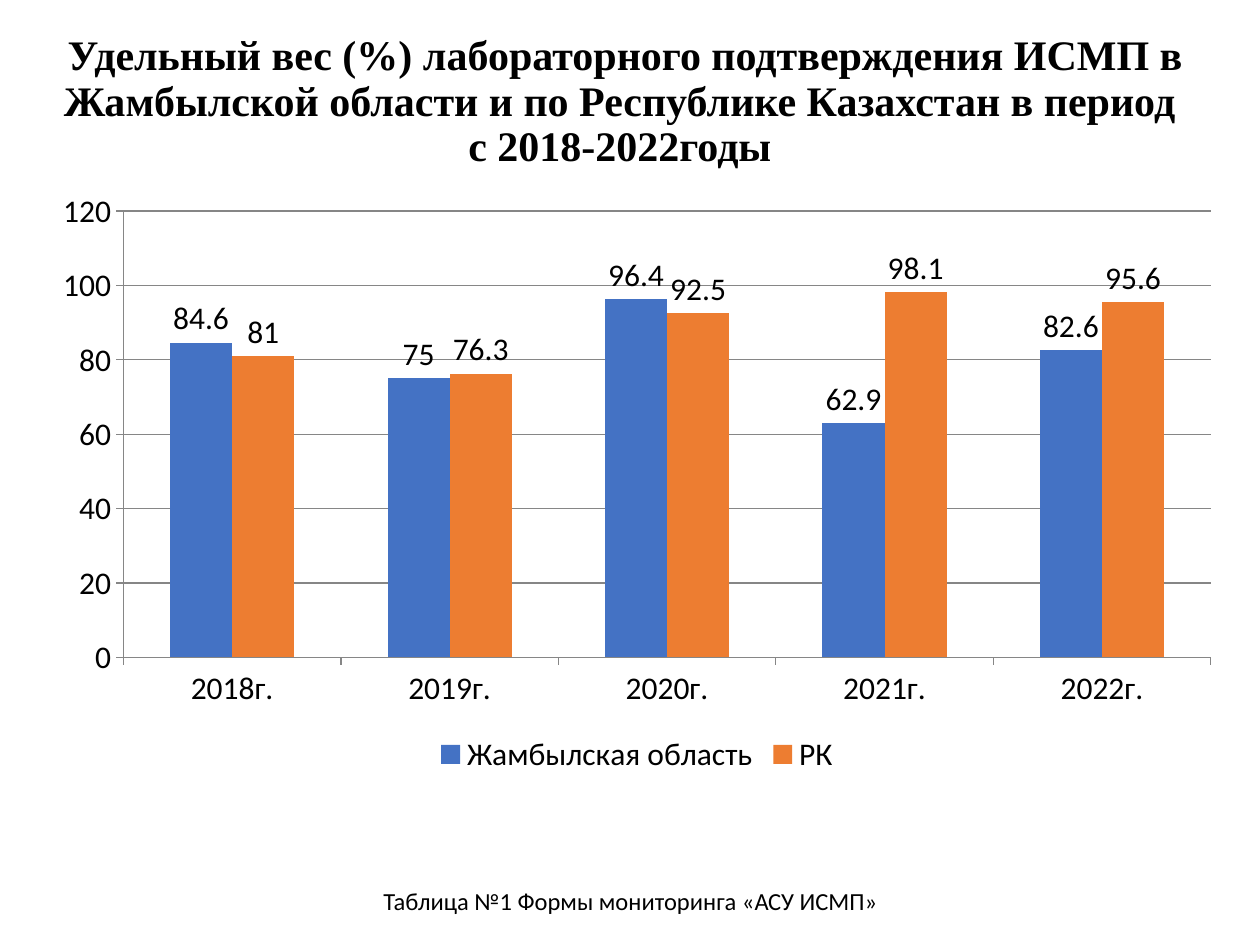
from pptx import Presentation
from pptx.chart.data import CategoryChartData
from pptx.dml.color import RGBColor
from pptx.enum.chart import XL_CHART_TYPE, XL_LABEL_POSITION, XL_LEGEND_POSITION, XL_TICK_MARK
from pptx.enum.text import MSO_ANCHOR, PP_ALIGN
from pptx.util import Cm, Pt

COLORS = {"text": "000000", "region": "4472C4", "country": "ED7D31", "grid": "868686"}

YEARS = ["2018г.", "2019г.", "2020г.", "2021г.", "2022г."]
SERIES = [
    ("Жамбылская область", [84.6, 75, 96.4, 62.9, 82.6], "region"),
    ("РК", [81, 76.3, 92.5, 98.1, 95.6], "country"),
]


def color(name):
    return RGBColor.from_string(COLORS[name])


def set_font(font, name, size, bold=False):
    font.name = name
    font.size = Pt(size)
    font.bold = bold
    font.color.rgb = color("text")


def add_text(s, box, text, font_name, size, bold=False, spacing=None, anchor=MSO_ANCHOR.TOP):
    tf = s.shapes.add_textbox(*map(Cm, box)).text_frame
    tf.word_wrap = True
    tf.vertical_anchor = anchor
    p = tf.paragraphs[0]
    p.text = text
    p.alignment = PP_ALIGN.CENTER
    p.line_spacing = spacing
    set_font(p.font, font_name, size, bold)


def add_column_chart(s, box):
    data = CategoryChartData()
    data.categories = YEARS
    for name, values, _ in SERIES:
        data.add_series(name, values)
    chart = s.shapes.add_chart(XL_CHART_TYPE.COLUMN_CLUSTERED, *map(Cm, box), data).chart
    set_font(chart.font, "Calibri", 18)
    chart.has_title = False

    # Legend
    chart.has_legend = True
    chart.legend.position = XL_LEGEND_POSITION.BOTTOM
    chart.legend.include_in_layout = False

    # Axes and gridlines
    value_axis = chart.value_axis
    value_axis.minimum_scale, value_axis.maximum_scale, value_axis.major_unit = 0, 120, 20
    value_axis.has_major_gridlines = True
    for axis in (chart.category_axis, value_axis):
        axis.major_tick_mark = XL_TICK_MARK.OUTSIDE
    for part in (chart.category_axis, value_axis, value_axis.major_gridlines):
        part.format.line.color.rgb = color("grid")
        part.format.line.width = Pt(0.75)

    # Columns and their values
    plot = chart.plots[0]
    plot.gap_width = 150
    plot.overlap = 0
    plot.vary_by_categories = False
    for series, (_, _, fill) in zip(plot.series, SERIES):
        series.format.fill.solid()
        series.format.fill.fore_color.rgb = color(fill)
        series.invert_if_negative = False
        labels = series.data_labels
        labels.show_value = True
        labels.position = XL_LABEL_POSITION.OUTSIDE_END


def main():
    prs = Presentation()
    prs.slide_width, prs.slide_height = Cm(25.4), Cm(19.05)
    s = prs.slides.add_slide(prs.slide_layouts[6])

    # Title
    add_text(s, (0.79, 0.51, 23.62, 3.12),
             "Удельный вес (%) лабораторного подтверждения ИСМП в Жамбылской области "
             "и по Республике Казахстан в период \vс 2018-2022годы ",
             "Times New Roman", 24, bold=True, spacing=0.9, anchor=MSO_ANCHOR.MIDDLE)

    # Chart
    add_column_chart(s, (0.79, 3.63, 24.1, 12.09))

    # Caption
    add_text(s, (6.02, 17.73, 13.39, 0.86),
             "Таблица №1 Формы мониторинга «АСУ ИСМП»", "Calibri", 14)

    prs.save("out.pptx")


if __name__ == "__main__":
    main()
